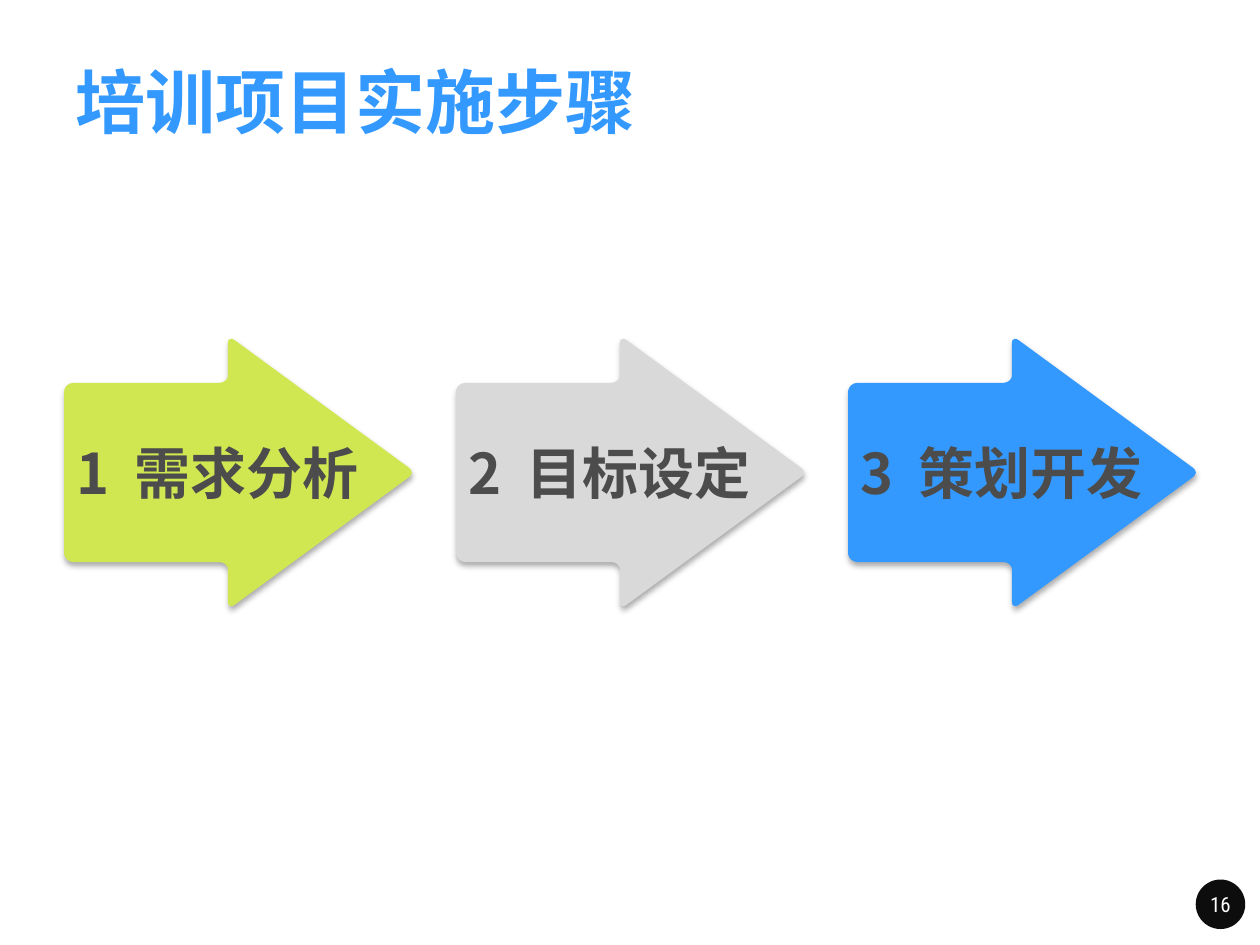
import pptx
import pptx.util
import pptx.dml.color
import pptx.enum.shapes
import pptx.enum.text
import pptx.oxml
import pptx.oxml.ns

Pt = pptx.util.Pt
CJK = "Noto Sans CJK SC"


def color(value):
    return pptx.dml.color.RGBColor.from_string(value)


def style(paragraph, face, size, value, bold, align):
    paragraph.alignment = align
    font = paragraph.font
    font.name, font.size, font.bold = face, Pt(size), bold
    font.color.rgb = color(value)
    east_asian = pptx.oxml.parse_xml(
        f'<a:ea {pptx.oxml.ns.nsdecls("a")} typeface="{face}"/>')
    paragraph.font._element.append(east_asian)


LEFT = pptx.enum.text.PP_ALIGN.LEFT
CENTER = pptx.enum.text.PP_ALIGN.CENTER
MIDDLE = pptx.enum.text.MSO_ANCHOR.MIDDLE

deck = pptx.Presentation()
deck.slide_width, deck.slide_height = Pt(720), Pt(540)
slide = deck.slides.add_slide(deck.slide_layouts[5])

title = slide.shapes.title
title.left, title.top, title.width, title.height = Pt(36), Pt(26), Pt(647), Pt(62.5)
title.text_frame.text = "培训项目实施步骤"
title.text_frame.vertical_anchor = MIDDLE
style(title.text_frame.paragraphs[0], CJK, 40, "3399FF", True, LEFT)

page_badge = slide.shapes.add_shape(
    pptx.enum.shapes.MSO_SHAPE.OVAL, Pt(683.3), Pt(502.6), Pt(28.3), Pt(28.3))
page_badge.shadow.inherit = False
page_badge.fill.solid()
page_badge.fill.fore_color.rgb = color("0D0D0D")
page_badge.line.fill.background()
page_text = page_badge.text_frame
page_text.margin_left = page_text.margin_right = Pt(2.88)
page_text.margin_top = page_text.margin_bottom = Pt(2.88)
page_text.vertical_anchor = MIDDLE
page_text.word_wrap = False
page_text.text = "16"
style(page_text.paragraphs[0], "Roboto Condensed", 12, "FFFFFF", False, CENTER)

upper_edge = [
    (0, -46.8), (0.6, -48.4), (1.7, -49.8), (3.3, -50.8), (5.1, -51.2),
    (88.9, -51.2), (90.7, -51.6), (92.3, -52.6), (93.3, -54), (93.6, -55.4),
    (93.6, -74.2), (93.9, -75.6), (95, -76.3), (96.2, -76.3), (97.4, -75.6),
    (196.6, -3), (198, -1.7), (198.7, 0),
]
lower_edge = [(x, -y) for x, y in reversed(upper_edge[:-1])]
arrow_outline = upper_edge + lower_edge

first_left, arrow_pitch, axis_y = 36.7, 224, 270
steps = [("需求分析", "D1E751"), ("目标设定", "D9D9D9"), ("策划开发", "3399FF")]

for index, (step_name, step_fill) in enumerate(steps):
    left = first_left + index * arrow_pitch
    points = [(Pt(left + x), Pt(axis_y + y)) for x, y in arrow_outline]
    builder = slide.shapes.build_freeform(*points[0])
    builder.add_line_segments(points[1:], close=True)
    arrow = builder.convert_to_shape()
    arrow.fill.solid()
    arrow.fill.fore_color.rgb = color(step_fill)
    arrow.line.fill.background()
    arrow.shadow.inherit = False
    effects = arrow._element.spPr.find(pptx.oxml.ns.qn("a:effectLst"))
    effects.append(pptx.oxml.parse_xml(
        f'<a:outerShdw {pptx.oxml.ns.nsdecls("a")} blurRad="{Pt(3.5)}" '
        f'dist="{Pt(2.2)}" dir="5400000" rotWithShape="0">'
        '<a:srgbClr val="000000"><a:alpha val="32000"/></a:srgbClr></a:outerShdw>'))

    arrow.text_frame.word_wrap = True
    arrow.text_frame.vertical_anchor = MIDDLE
    label = arrow.text_frame.paragraphs[0]
    number = label.add_run()
    number.text = f"{index + 1} "
    number.font._element.set("spc", "350")
    label.add_run().text = step_name
    style(label, CJK, 32, "4C4C4C", True, LEFT)

deck.save("out.pptx")
